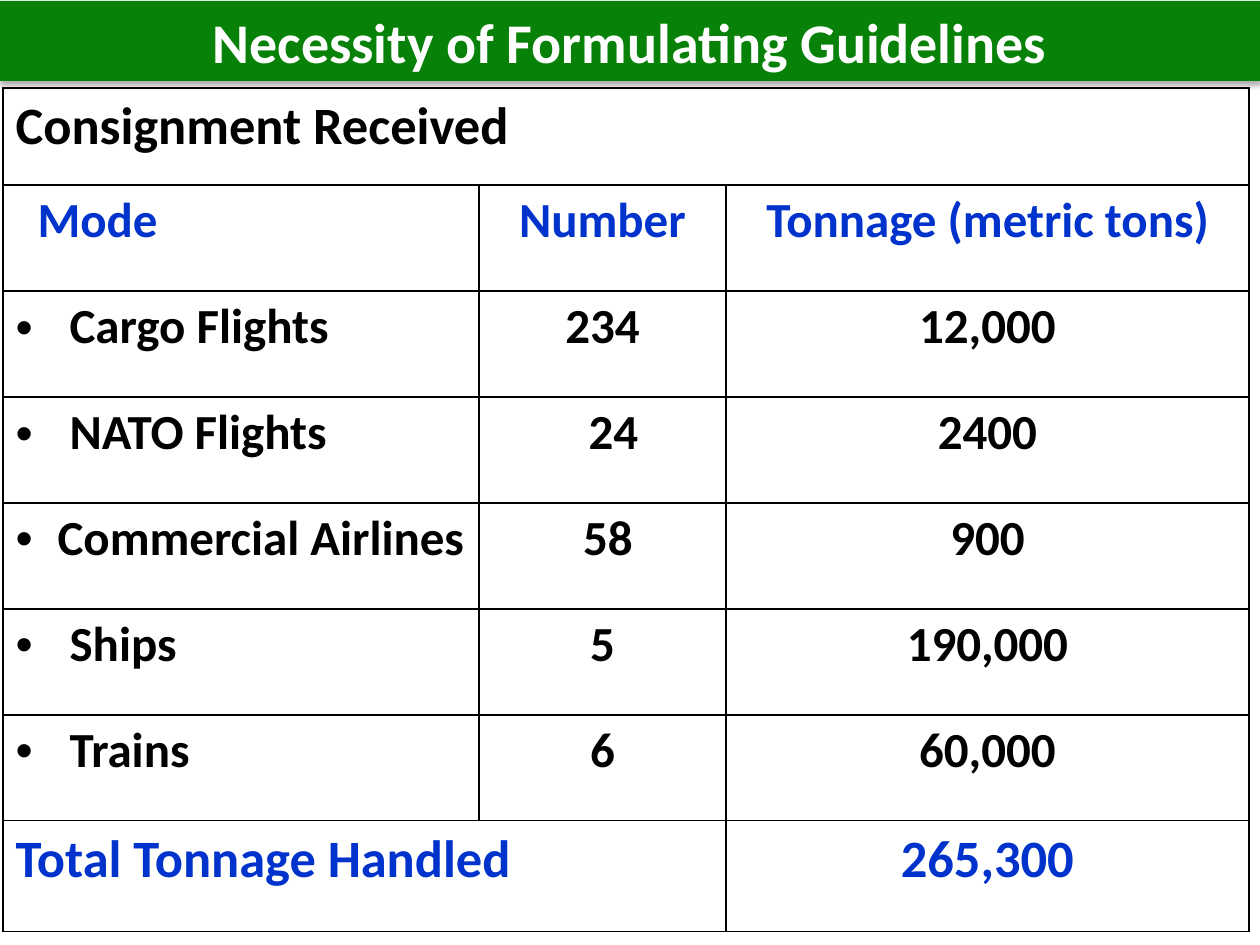
from dataclasses import dataclass

from lxml.etree import _Element
from pptx import Presentation
from pptx.dml.color import RGBColor
from pptx.enum.text import MSO_ANCHOR, PP_ALIGN
from pptx.oxml import parse_xml
from pptx.oxml.ns import nsdecls
from pptx.table import _Cell
from pptx.text.text import _Paragraph
from pptx.util import Pt

SCALE = 914400 / 126
FONT = "Calibri"
GREEN, WHITE, BLACK, BLUE = "078107", "FFFFFF", "000000", "0033CC"
LEFT, CENTER = PP_ALIGN.LEFT, PP_ALIGN.CENTER
COLS = [476, 247, 523]
ROWS = [97] + [106] * 6 + [111]


@dataclass
class Entry:
    text: str
    align: PP_ALIGN = CENTER
    size: int = 28
    color: str = BLACK
    indent: int = 0
    bullet: bool = False
    span: int = 1


@dataclass
class Transport:
    mode: str
    number: str
    tonnage: str
    mode_indent: int = 54
    number_indent: int = 0


TRANSPORTS = [
    Transport("Cargo Flights", "234", "12,000"),
    Transport("NATO Flights", "24", "2400", number_indent=22),
    Transport("Commercial Airlines", "58", "900", mode_indent=42, number_indent=11),
    Transport("Ships", "5", "190,000"),
    Transport("Trains", "6", "60,000"),
]


def px(n: int) -> int:
    return round(n * SCALE)


def rgb(color: str) -> RGBColor:
    return RGBColor.from_string(color)


def drawing(tag: str, attrs: str = "", inner: str = "") -> _Element:
    return parse_xml(f"<a:{tag} {nsdecls('a')} {attrs}>{inner}</a:{tag}>")


def add_run(p: _Paragraph, text: str, size: int, color: str) -> None:
    r = p.add_run()
    r.text = text
    r.font.name = FONT
    r.font.size = Pt(size)
    r.font.bold = True
    r.font.color.rgb = rgb(color)


def add_title(slide, text: str) -> None:
    sp = slide.shapes.title
    sp.left, sp.top, sp.width, sp.height = px(0), px(1), px(1260), px(80)
    sp.fill.solid()
    sp.fill.fore_color.rgb = rgb(GREEN)
    shadow = (f'<a:outerShdw blurRad="{Pt(3.5)}" dist="{Pt(2.2)}" dir="5400000" rotWithShape="0">'
              f'<a:srgbClr val="{BLACK}"><a:alpha val="32000"/></a:srgbClr></a:outerShdw>')
    sp._element.spPr.append(drawing("effectLst", inner=shadow))
    tf = sp.text_frame
    tf.word_wrap = True
    tf.vertical_anchor = MSO_ANCHOR.MIDDLE
    p = tf.paragraphs[0]
    p.alignment = CENTER
    p.line_spacing = Pt(38)
    add_run(p, text, 32, WHITE)


def add_borders(cell: _Cell) -> None:
    tc_pr = cell._tc.get_or_add_tcPr()
    line = f'<a:solidFill><a:srgbClr val="{BLACK}"/></a:solidFill>'
    for i, side in enumerate(("lnL", "lnR", "lnT", "lnB")):
        tc_pr.insert(i, drawing(side, f'w="{Pt(1)}"', line))


def fill_cell(cell: _Cell, entry: Entry) -> None:
    p = cell.text_frame.paragraphs[0]
    p.alignment = entry.align
    p_pr = p._p.get_or_add_pPr()
    indent = px(entry.indent)
    p_pr.set("marL", str(indent))
    p_pr.set("indent", str(-indent if entry.bullet else 0))
    if entry.bullet:
        p_pr.append(drawing("buFont", 'typeface="Arial"'))
        p_pr.append(drawing("buChar", 'char="•"'))
    add_run(p, entry.text, entry.size, entry.color)


def table_rows() -> list[list[Entry]]:
    header = [Entry("Mode", LEFT, color=BLUE, indent=22),
              Entry("Number", color=BLUE),
              Entry("Tonnage (metric tons)", color=BLUE)]
    body = [[Entry(t.mode, LEFT, indent=t.mode_indent, bullet=True),
             Entry(t.number, indent=t.number_indent),
             Entry(t.tonnage)] for t in TRANSPORTS]
    total = [Entry("Total Tonnage Handled", LEFT, 30, BLUE, span=2),
             Entry("265,300", size=30, color=BLUE)]
    return [[Entry("Consignment Received", LEFT, 30, span=3)], header, *body, total]


def add_consignment_table(slide) -> None:
    frame = slide.shapes.add_table(len(ROWS), len(COLS), px(3), px(88),
                                   px(sum(COLS)), px(sum(ROWS)))
    table = frame.table
    table.first_row = table.horz_banding = False
    for column, width in zip(table.columns, COLS):
        column.width = px(width)
    for row, height in zip(table.rows, ROWS):
        row.height = px(height)
    for cell in table.iter_cells():
        cell.fill.background()
        add_borders(cell)
    for i, entries in enumerate(table_rows()):
        col = 0
        for entry in entries:
            cell = table.cell(i, col)
            if entry.span > 1:
                cell.merge(table.cell(i, col + entry.span - 1))
            fill_cell(cell, entry)
            col += entry.span


def main() -> None:
    prs = Presentation()
    prs.slide_width, prs.slide_height = px(1260), px(945)
    slide = prs.slides.add_slide(prs.slide_layouts[5])
    add_title(slide, "Necessity of Formulating Guidelines")
    add_consignment_table(slide)
    prs.save("out.pptx")


if __name__ == "__main__":
    main()
